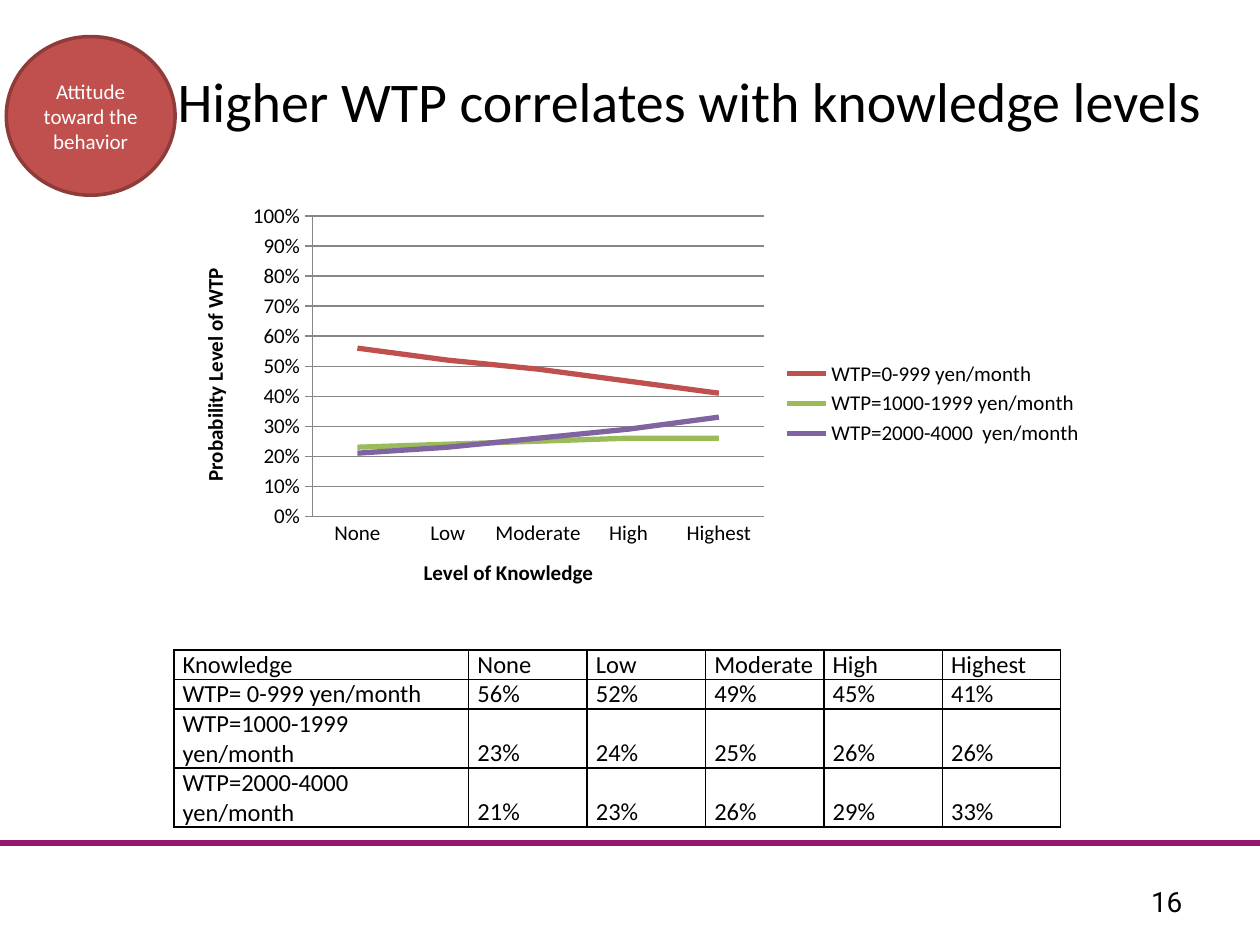
import pptx
import pptx.chart.data
import pptx.dml.color
import pptx.enum.chart
import pptx.enum.shapes
import pptx.enum.text
import pptx.oxml
import pptx.oxml.ns
import pptx.util
from pptx.util import Inches

ALIGN = pptx.enum.text.PP_ALIGN
ANCHOR = pptx.enum.text.MSO_ANCHOR
TICK = pptx.enum.chart.XL_TICK_MARK
NS = pptx.oxml.ns.nsdecls

LEVELS = ["None", "Low", "Moderate", "High", "Highest"]
# chart name, table name, colour, shares by knowledge level
WTP = [
    ("WTP=0-999 yen/month", "WTP= 0-999 yen/month", "C0504D",
     [0.56, 0.52, 0.49, 0.45, 0.41]),
    ("WTP=1000-1999 yen/month", "WTP=1000-1999 yen/month", "9BBB59",
     [0.23, 0.24, 0.25, 0.26, 0.26]),
    ("WTP=2000-4000  yen/month", "WTP=2000-4000 yen/month", "8064A2",
     [0.21, 0.23, 0.26, 0.29, 0.33]),
]


def rgb(value):
    return pptx.dml.color.RGBColor.from_string(value)


def set_font(font, size, color="000000", name="Calibri", bold=False):
    values = {"size": pptx.util.Pt(size), "name": name, "bold": bold}
    for key, value in values.items():
        setattr(font, key, value)
    font.color.rgb = rgb(color)


def set_line(line, color, width):
    line.color.rgb = rgb(color)
    line.width = pptx.util.Pt(width)


def set_text(tf, text, size, align=ALIGN.CENTER, anchor=ANCHOR.MIDDLE, **font):
    tf.word_wrap = True
    tf.vertical_anchor = anchor
    p = tf.paragraphs[0]
    p.alignment = align
    r = p.add_run()
    r.text = text
    set_font(r.font, size, **font)


def place(shape, box):
    for key, value in zip(("left", "top", "width", "height"), box):
        setattr(shape, key, Inches(value))


def add_title(s, box):
    title = s.shapes.title
    place(title, box)
    set_text(title.text_frame, "Higher WTP correlates with knowledge levels",
             32, anchor=ANCHOR.TOP)


def add_footer(s, rule_y, box):
    rule = s.shapes.add_connector(pptx.enum.shapes.MSO_CONNECTOR.STRAIGHT,
                                  0, Inches(rule_y), Inches(10), Inches(rule_y))
    set_line(rule.line, "93166F", 3)
    sp_pr = rule._element.spPr
    sp_pr.append(pptx.oxml.parse_xml(f"<a:effectLst {NS('a')}/>"))
    number = s.shapes.add_textbox(*map(Inches, box))
    set_text(number.text_frame, "16", 16, name="Roboto")


def style_axis(axis, title, tick):
    axis.has_title = True
    tf = axis.axis_title.text_frame
    tf.text = title
    set_font(tf.paragraphs[0].runs[0].font, 12, bold=True)
    set_font(axis.tick_labels.font, 12)
    axis.major_tick_mark = tick
    axis.minor_tick_mark = TICK.NONE
    set_line(axis.format.line, "878787", 0.75)


def set_plot_area(chart, **fractions):
    """Fix the inner plot area as fractions of the chart."""
    parts = "".join(f'<c:{k} val="{v}"/>' for k, v in fractions.items())
    layout = pptx.oxml.parse_xml(
        f'<c:layout {NS("c")}><c:manualLayout><c:layoutTarget val="inner"/>'
        f'<c:xMode val="edge"/><c:yMode val="edge"/>{parts}'
        '</c:manualLayout></c:layout>')
    plot_area = chart._chartSpace.chart.plotArea
    for old in plot_area.findall(pptx.oxml.ns.qn("c:layout")):
        plot_area.remove(old)
    plot_area.insert(0, layout)


def add_wtp_chart(s, box):
    data = pptx.chart.data.CategoryChartData(number_format="0%")
    data.categories = LEVELS
    for name, _, _, shares in WTP:
        data.add_series(name, shares)
    chart = s.shapes.add_chart(pptx.enum.chart.XL_CHART_TYPE.LINE,
                               *map(Inches, box), data).chart
    set_font(chart.font, 12)
    chart.has_title = False
    chart.has_legend = True
    chart.legend.position = pptx.enum.chart.XL_LEGEND_POSITION.RIGHT
    chart.legend.include_in_layout = False
    set_font(chart.legend.font, 12)

    style_axis(chart.category_axis, "Level of Knowledge", TICK.NONE)
    axis = chart.value_axis
    style_axis(axis, "Probability Level of WTP", TICK.OUTSIDE)
    axis.minimum_scale, axis.maximum_scale, axis.major_unit = 0, 1, 0.1
    axis.tick_labels.number_format = "0%"
    axis.tick_labels.number_format_is_linked = False
    set_line(axis.major_gridlines.format.line, "878787", 0.75)

    chart.plots[0].vary_by_categories = False
    for series, (_, _, color, _) in zip(chart.plots[0].series, WTP):
        series.smooth = False
        series.marker.style = pptx.enum.chart.XL_MARKER_STYLE.NONE
        set_line(series.format.line, color, 3)
    set_plot_area(chart, x=0.15, y=0.05, w=0.49, h=0.72)


def set_cell(cell, text):
    cell.fill.background()
    cell.margin_left = cell.margin_right = Inches(0.07)
    cell.margin_top = cell.margin_bottom = 0
    set_text(cell.text_frame, text, 14, align=ALIGN.JUSTIFY, anchor=None)
    cell.vertical_anchor = ANCHOR.BOTTOM
    tc_pr = cell._tc.get_or_add_tcPr()
    for i, side in enumerate(("lnL", "lnR", "lnT", "lnB")):
        tc_pr.insert(i, pptx.oxml.parse_xml(
            f'<a:{side} {NS("a")} w="12700"><a:solidFill>'
            f'<a:srgbClr val="000000"/></a:solidFill></a:{side}>'))


def add_wtp_table(s, box):
    rows = [["Knowledge"] + LEVELS]
    rows += [[label] + [f"{v:.0%}" for v in shares]
             for _, label, _, shares in WTP]
    table = s.shapes.add_table(len(rows), len(rows[0]),
                               *map(Inches, box)).table
    table.first_row = table.horz_banding = False
    level_width = 0.94
    label_width = box[2] - level_width * len(LEVELS)
    for i, column in enumerate(table.columns):
        column.width = Inches(level_width if i else label_width)
    unit = box[3] / 6  # two one-line rows, two two-line rows
    for row, lines in zip(table.rows, (1, 1, 2, 2)):
        row.height = Inches(unit * lines)
    for i, texts in enumerate(rows):
        for j, text in enumerate(texts):
            set_cell(table.cell(i, j), text)


def add_badge(s, box):
    sp = s.shapes.add_shape(pptx.enum.shapes.MSO_SHAPE.OVAL,
                            *map(Inches, box))
    sp.shadow.inherit = False
    sp.fill.solid()
    sp.fill.fore_color.rgb = rgb("C0504D")
    set_line(sp.line, "8E3B39", 2)
    set_text(sp.text_frame, "Attitude toward the behavior", 12, color="FFFFFF")


def main():
    prs = pptx.Presentation()
    prs.slide_width, prs.slide_height = Inches(10), Inches(7.5)
    s = prs.slides.add_slide(prs.slide_layouts[5])
    add_footer(s, 6.69, (9.02, 6.95, 0.48, 0.4))
    add_title(s, (0.67, 0.48, 9.61, 1.25))
    add_wtp_chart(s, (1.38, 1.55, 7.32, 3.31))
    add_wtp_table(s, (1.38, 5.16, 7.04, 1.4))
    add_badge(s, (0.05, 0.29, 1.34, 1.26))
    prs.save("out.pptx")


if __name__ == "__main__":
    main()
